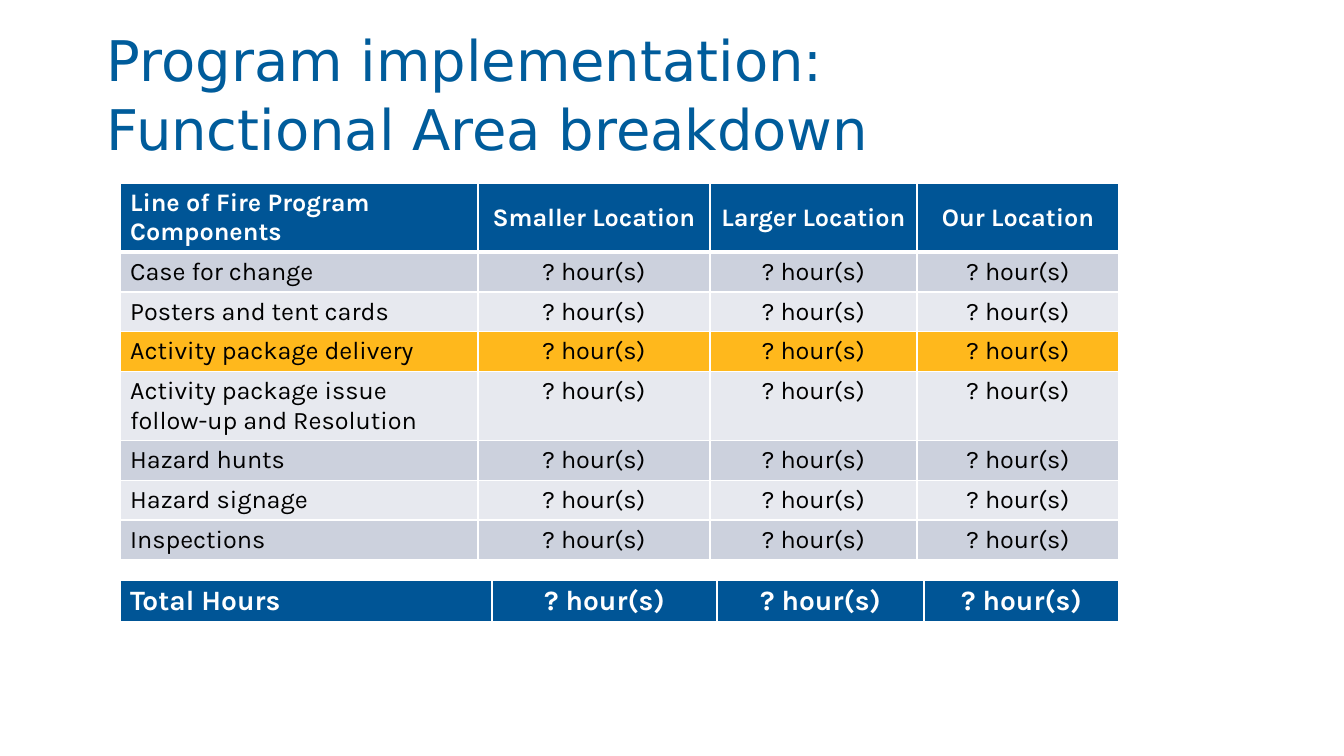
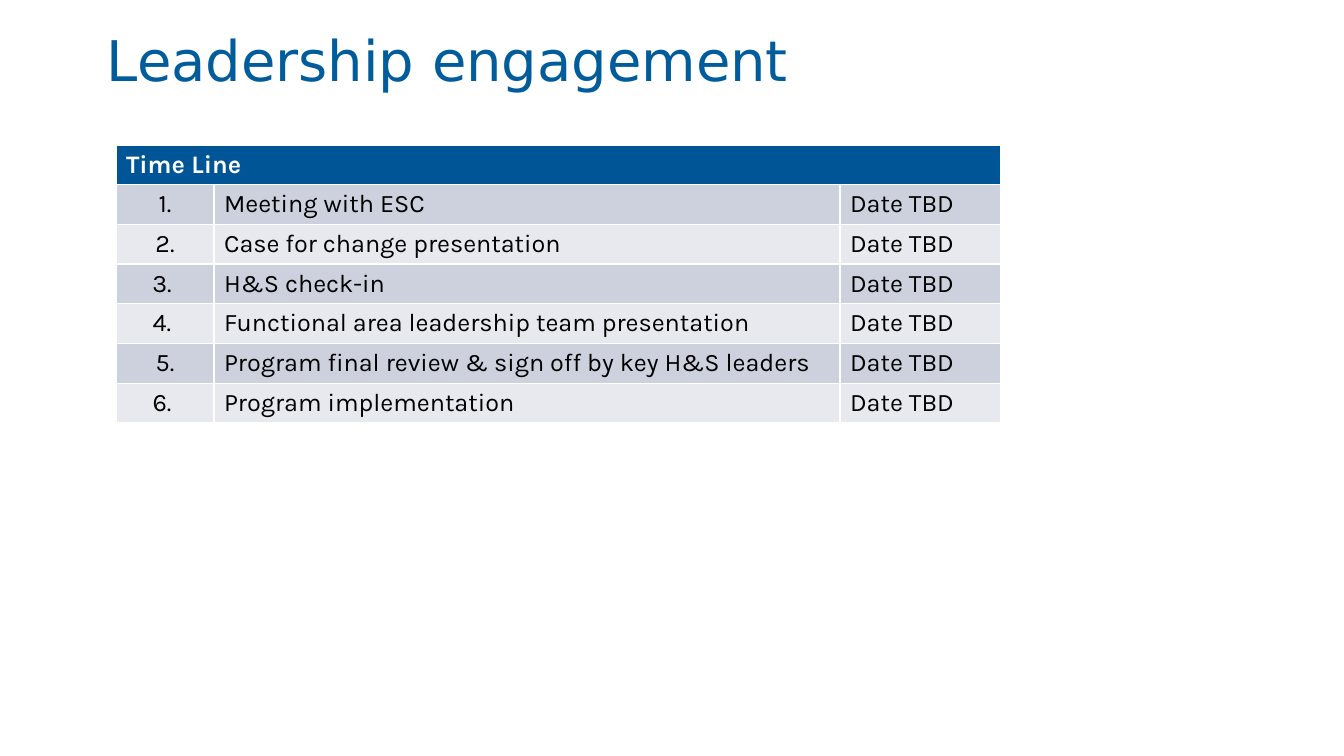
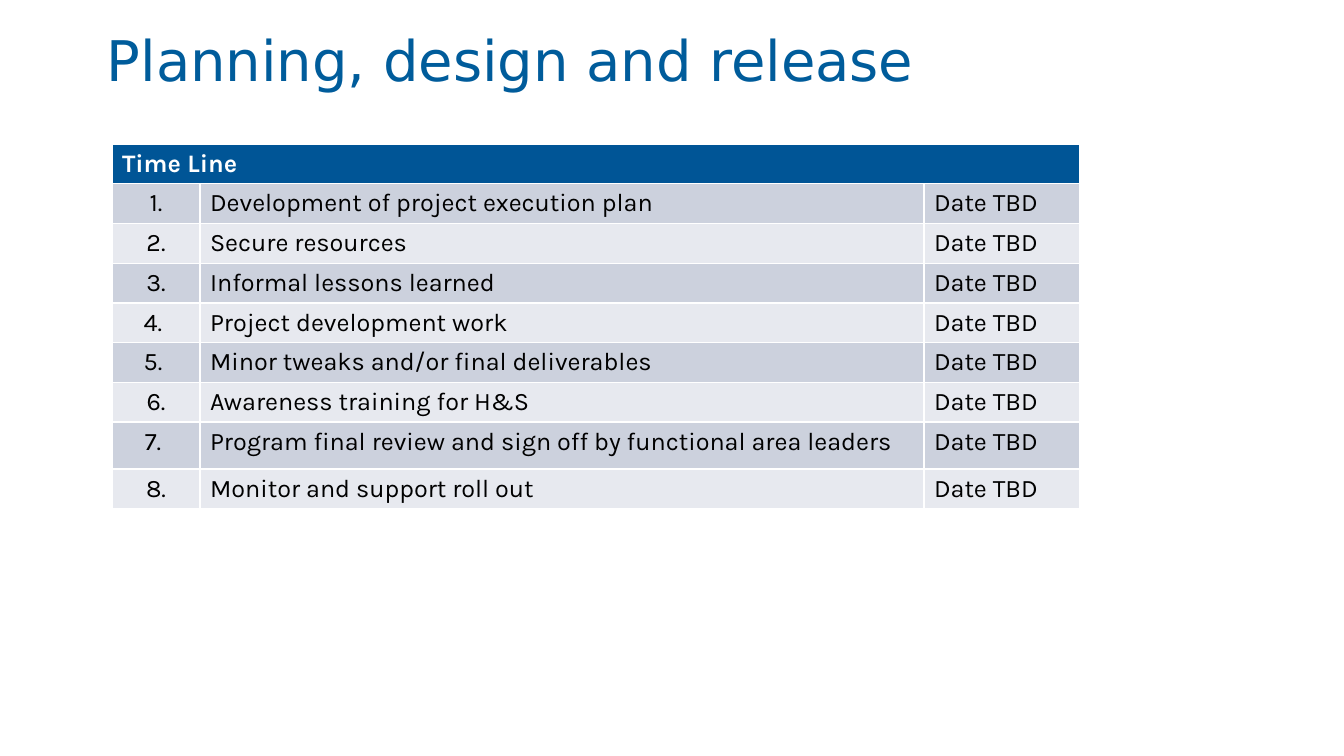
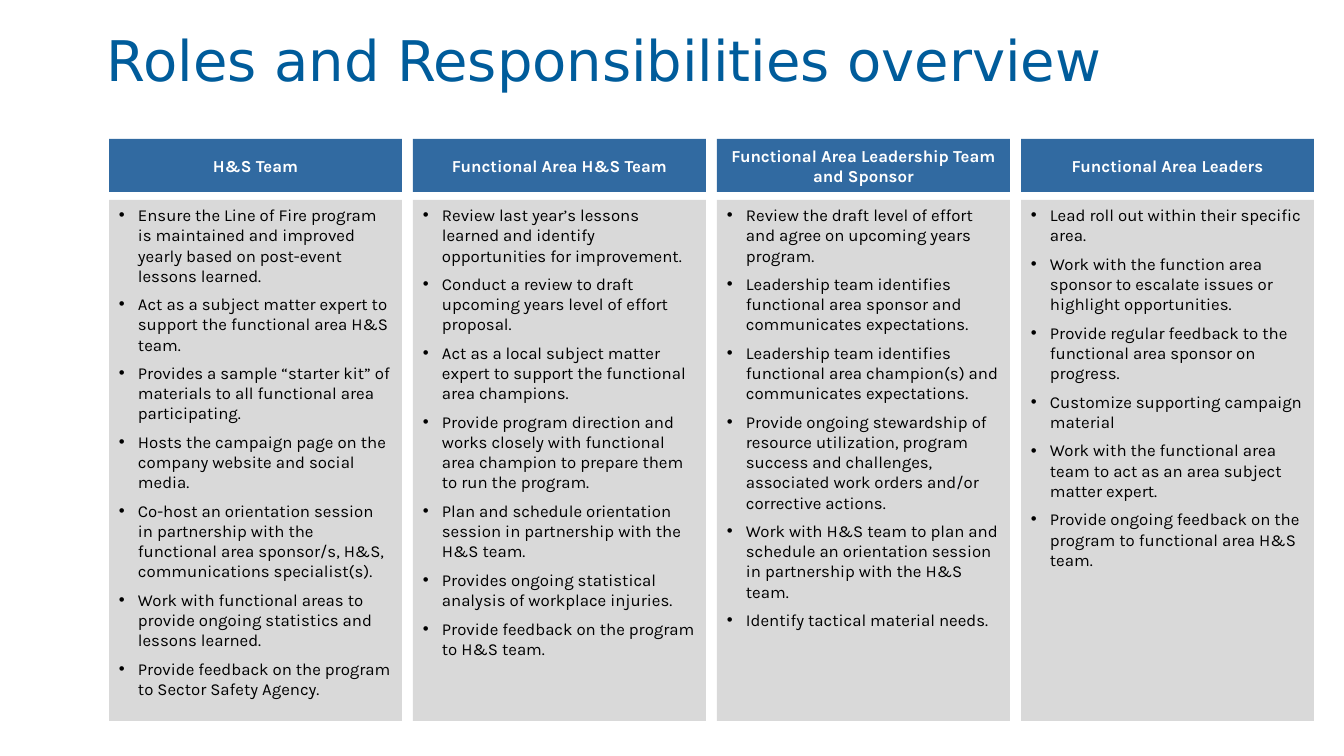
from lxml.etree import SubElement
from pptx import Presentation
from pptx.dml.color import RGBColor
from pptx.enum.shapes import MSO_SHAPE as Shape
from pptx.enum.text import MSO_ANCHOR as Anchor, MSO_AUTO_SIZE as AutoSize, PP_ALIGN as Align
from pptx.oxml.ns import qn
from pptx.util import Emu, Pt

TITLE_BLUE = RGBColor(0x00, 0x5C, 0x9B)
HEADER_BLUE = RGBColor(0x00, 0x55, 0x96)
ROLE_BLUE = RGBColor(0x31, 0x6A, 0xA1)
BAND_DARK = RGBColor(0xCC, 0xD1, 0xDD)
BAND_LIGHT = RGBColor(0xE7, 0xE9, 0xEF)
AMBER = RGBColor(0xFF, 0xB8, 0x1C)
PANEL_GRAY = RGBColor(0xD9, 0xD9, 0xD9)
WHITE = RGBColor(0xFF, 0xFF, 0xFF)
BLACK = RGBColor(0x00, 0x00, 0x00)
TITLE_FONT = "DejaVu Sans"
BODY_FONT = "Karla"


def px(length):
    return Emu(round(length * 12192000 / 1344))


def write(para, text, size, color, bold=False, font=BODY_FONT):
    span = para.add_run()
    span.text = text
    span.font.name = font
    span.font.size = Pt(size)
    span.font.bold = bold
    span.font.color.rgb = color


deck = Presentation()
deck.slide_width, deck.slide_height = px(1344), px(756)

# Pages and titles
titles = [
    ("Program implementation: Functional Area breakdown", 1010),
    ("Leadership engagement", 1010),
    ("Planning, design and release", 1010),
    ("Roles and Responsibilities overview", 1169),
]
pages = []
for text, width in titles:
    page = deck.slides.add_slide(deck.slide_layouts[5])
    title = page.shapes.title
    title.left, title.top, title.width, title.height = px(100), px(18), px(width), px(88)
    frame = title.text_frame
    frame.auto_size = AutoSize.NONE
    frame.word_wrap = True
    frame.vertical_anchor = Anchor.TOP
    frame.margin_left = px(7)
    para = frame.paragraphs[0]
    para.alignment = Align.LEFT
    para.line_spacing = 1.03
    write(para, text, 40, TITLE_BLUE, font=TITLE_FONT)
    pages.append(page)
breakdown_page, leadership_page, planning_page, roles_page = pages

# Tables
HOURS = ["? hour(s)"] * 3
components = [
    "Case for change",
    "Posters and tent cards",
    "Activity package delivery",
    "Activity package issue follow-up and Resolution",
    "Hazard hunts",
    "Hazard signage",
    "Inspections",
]
breakdown_rows = [
    ["Line of Fire Program Components", "Smaller Location", "Larger Location", "Our Location"],
    *([component] + HOURS for component in components),
]
leadership_steps = [
    ("1.", "Meeting with ESC"),
    ("2.", "Case for change presentation"),
    ("3. ", "H&S check-in"),
    ("4. ", "Functional area leadership team presentation"),
    ("5.", "Program final review & sign off by key H&S leaders"),
    ("6. ", "Program implementation"),
]
planning_steps = [
    ("1.", "Development of project execution plan"),
    ("2.", "Secure resources"),
    ("3.", "Informal lessons learned"),
    ("4. ", "Project development work"),
    ("5. ", "Minor tweaks and/or final deliverables"),
    ("6.", "Awareness training for H&S"),
    ("7. ", "Program final review and sign off by functional area leaders"),
    ("8.", "Monitor and support roll out"),
]
leadership_rows, planning_rows = (
    [["Time Line", "", ""], *([number, step, "Date TBD"] for number, step in steps)]
    for steps in (leadership_steps, planning_steps)
)

# page, left, top, column widths, row heights, rows, centred columns,
# text size, header rule in points, highlighted row
tables = [
    (breakdown_page, 120, 183, [358, 232, 207, 202], [68, 39, 39, 39, 68, 39, 39, 39],
     breakdown_rows, {1, 2, 3}, 18, 3, 3),
    (breakdown_page, 120, 580, [372, 225, 207, 195], [40],
     [["Total Hours"] + HOURS], {1, 2, 3}, 20, 3, None),
    (leadership_page, 116, 145, [98, 626, 161], [39] * 7,
     leadership_rows, {0}, 18, 1, None),
    (planning_page, 112, 144, [88, 724, 156], [39, 40, 39, 39, 39, 39, 39, 47, 39],
     planning_rows, {0}, 18, 1, None),
]
for page, left, top, widths, heights, rows, centred, size, rule, highlight in tables:
    table = page.shapes.add_table(len(rows), len(widths), px(left), px(top),
                                  px(sum(widths)), px(sum(heights))).table
    for column, width in zip(table.columns, widths):
        column.width = px(width)
    for row, height in zip(table.rows, heights):
        row.height = px(height)
    spanning_header = not rows[0][1]
    if spanning_header:
        table.cell(0, 0).merge(table.cell(0, len(widths) - 1))
    for r, texts in enumerate(rows):
        is_header = r == 0
        if is_header:
            fill = HEADER_BLUE
        elif r == highlight:
            fill = AMBER
        else:
            fill = BAND_DARK if r % 2 else BAND_LIGHT
        for c, text in enumerate(texts):
            cell = table.cell(r, c)
            borders = {"L": 1, "R": 1, "T": rule if r == 1 else 1, "B": rule if is_header else 1}
            for side, points in borders.items():
                line = SubElement(cell._tc.get_or_add_tcPr(), qn("a:ln" + side), w=str(Pt(points)))
                SubElement(SubElement(line, qn("a:solidFill")), qn("a:srgbClr"), val=str(WHITE))
            cell.fill.solid()
            cell.fill.fore_color.rgb = fill
            if not text:
                continue
            cell.vertical_anchor = Anchor.MIDDLE if is_header else Anchor.TOP
            para = cell.text_frame.paragraphs[0]
            if c in centred and not (is_header and spanning_header):
                para.alignment = Align.CENTER
            write(para, text, size, WHITE if is_header else BLACK, bold=is_header)

# Role columns
roles = [
    ("H&S Team", [
        "Ensure the Line of Fire program is maintained and improved yearly based on post-event lessons learned.",
        "Act as a subject matter expert to support the functional area H&S team.",
        "Provides a sample “starter kit” of materials to all functional area participating.",
        "Hosts the campaign page on the company website and social media.",
        "Co-host an orientation session in partnership with the functional area sponsor/s, H&S, "
        "communications specialist(s).",
        "Work with functional areas to provide ongoing statistics and lessons learned.",
        "Provide feedback on the program to Sector Safety Agency.",
    ]),
    ("Functional Area H&S Team", [
        "Review last year’s lessons learned and identify opportunities for improvement.",
        "Conduct a review to draft upcoming years level of effort proposal.",
        "Act as a local subject matter expert to support the functional area champions.",
        "Provide program direction and works closely with functional area champion to prepare them "
        "to run the program.",
        "Plan and schedule orientation session in partnership with the H&S team.",
        "Provides ongoing statistical analysis of workplace injuries.",
        "Provide feedback on the program to H&S team.",
    ]),
    ("Functional Area Leadership Team and Sponsor", [
        "Review the draft level of effort and agree on upcoming years program.",
        "Leadership team identifies functional area sponsor and communicates expectations.",
        "Leadership team identifies functional area champion(s) and communicates expectations.",
        "Provide ongoing stewardship of resource utilization, program success and challenges, "
        "associated work orders and/or corrective actions.",
        "Work with H&S team to plan and schedule an orientation session in partnership with the H&S team.",
        "Identify tactical material needs.",
    ]),
    ("Functional Area Leaders", [
        "Lead roll out within their specific area.",
        "Work with the function area sponsor to escalate issues or highlight opportunities.",
        "Provide regular feedback to the functional area sponsor on progress.",
        "Customize supporting campaign material",
        "Work with the functional area team to act as an area subject matter expert.",
        "Provide ongoing feedback on the program to functional area H&S team.",
    ]),
]
ROLE_LEFT, ROLE_WIDTH, ROLE_GAP = 109, 293, 11
BULLET_INDENT = px(19)
for i, (role, duties) in enumerate(roles):
    left = ROLE_LEFT + i * (ROLE_WIDTH + ROLE_GAP)
    frames = []
    for top, height, fill, anchor in ((139, 53, ROLE_BLUE, Anchor.MIDDLE),
                                      (200, 521, PANEL_GRAY, Anchor.TOP)):
        box = roles_page.shapes.add_shape(Shape.RECTANGLE, px(left), px(top), px(ROLE_WIDTH), px(height))
        box.shadow.inherit = False
        box.fill.solid()
        box.fill.fore_color.rgb = fill
        box.line.fill.background()
        box.text_frame.word_wrap = True
        box.text_frame.vertical_anchor = anchor
        frames.append(box.text_frame)
    header, panel = frames
    header.paragraphs[0].alignment = Align.CENTER
    write(header.paragraphs[0], role, 12, WHITE, bold=True)
    for n, duty in enumerate(duties):
        para = panel.add_paragraph() if n else panel.paragraphs[0]
        properties = para._p.get_or_add_pPr()
        properties.set("marL", str(BULLET_INDENT))
        properties.set("indent", str(-BULLET_INDENT))
        SubElement(properties, qn("a:buFont"), typeface="Arial")
        SubElement(properties, qn("a:buChar"), char="•")
        para.alignment = Align.LEFT
        para.space_after = Pt(6)
        write(para, duty, 12, BLACK)

deck.save("out.pptx")
